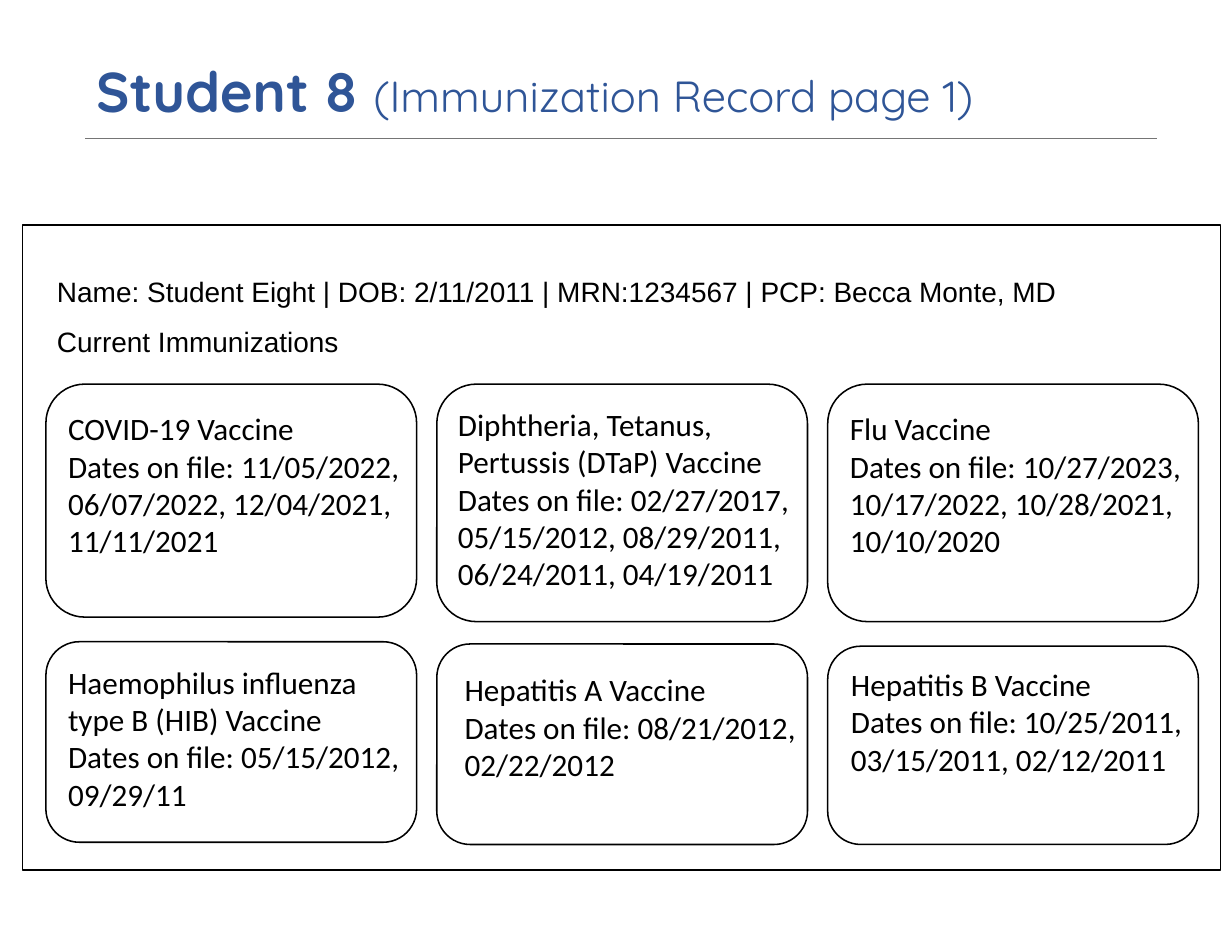
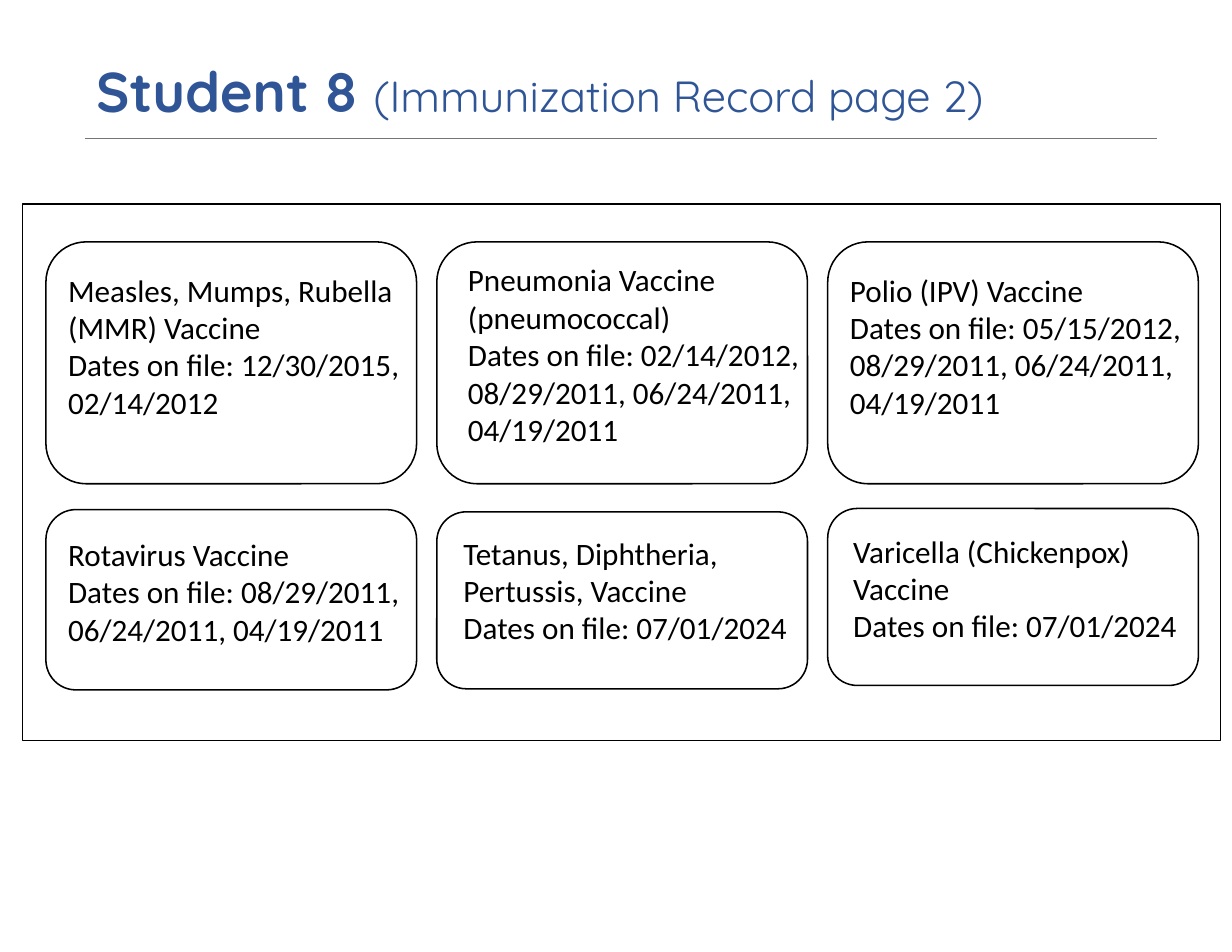
"""Build the two immunization record slides for Student 8."""
from dataclasses import dataclass

from lxml import etree
from pptx import Presentation
from pptx.dml.color import RGBColor
from pptx.enum.shapes import MSO_CONNECTOR, MSO_SHAPE
from pptx.enum.text import MSO_ANCHOR
from pptx.oxml.ns import qn
from pptx.util import Inches, Pt

RECTANGLE = MSO_SHAPE.RECTANGLE
ROUNDED = MSO_SHAPE.ROUNDED_RECTANGLE
STRAIGHT = MSO_CONNECTOR.STRAIGHT
TOP, MIDDLE = MSO_ANCHOR.TOP, MSO_ANCHOR.MIDDLE

COLORS = {"title": "2F5597", "rule": "757575", "ink": "000000"}
TITLE_FONT, INFO_FONT, CARD_FONT = "Quicksand", "Arial", "Calibri"
COLUMN_LEFT, COLUMN_STEP, COLUMNS = 0.41, 3.49, 3
CARD_WIDTH, CARD_TEXT_WIDTH = 3.31, 3.2


@dataclass
class Card:
    top: float
    height: float
    text_left: float
    text_top: float
    vaccine: str
    dates: str


class RecordDeck:
    def __init__(self):
        self.presentation = Presentation()
        self.presentation.slide_width = Inches(11)
        self.presentation.slide_height = Inches(8.5)
        self.slide = None

    def color(self, name):
        return RGBColor.from_string(COLORS[name])

    def style_run(self, run, font, size, color="ink", bold=False):
        run.font.name = font
        run.font.size = Pt(size)
        run.font.bold = bold
        run.font.color.rgb = self.color(color)

    def text_box(self, left, top, width, height, anchor=TOP):
        shape = self.slide.shapes.add_textbox(
            Inches(left), Inches(top), Inches(width), Inches(height))
        shape.text_frame.word_wrap = True
        shape.text_frame.vertical_anchor = anchor
        return shape.text_frame

    def text(self, left, top, width, height, content, font, size, spacing=1.0):
        text_frame = self.text_box(left, top, width, height)
        text_frame.text = content
        for paragraph in text_frame.paragraphs:
            paragraph.line_spacing = spacing
            for run in paragraph.runs:
                self.style_run(run, font, size)

    def outline(self, kind, left, top, width, height):
        shape = self.slide.shapes.add_shape(
            kind, Inches(left), Inches(top), Inches(width), Inches(height))
        shape.shadow.inherit = False
        shape.fill.background()
        shape.line.color.rgb = self.color("ink")
        shape.line.width = Pt(1)

    def rule(self, left, right, top):
        connector = self.slide.shapes.add_connector(
            STRAIGHT, Inches(left), Inches(top), Inches(right), Inches(top))
        connector.line.color.rgb = self.color("rule")
        connector.line.width = Pt(0.75)
        properties = connector.element.find(qn("p:spPr"))
        etree.SubElement(properties, qn("a:effectLst"))

    def title(self, subtitle):
        paragraph = self.text_box(0.76, 0.45, 9.49, 0.79, MIDDLE).paragraphs[0]
        paragraph.line_spacing = 0.9
        for content, size, bold in (("Student 8 ", 36, True), (subtitle, 28, False)):
            run = paragraph.add_run()
            run.text = content
            self.style_run(run, TITLE_FONT, size, "title", bold)

    def card(self, column, card):
        left = COLUMN_LEFT + column * COLUMN_STEP
        self.outline(ROUNDED, left, card.top, CARD_WIDTH, card.height)
        self.text(card.text_left, card.text_top, CARD_TEXT_WIDTH, 1.45,
                  f"{card.vaccine}\nDates on file: {card.dates}", CARD_FONT, 20)

    def record_page(self, number, frame_top, frame_height, cards):
        layout = self.presentation.slide_layouts[6]
        self.slide = self.presentation.slides.add_slide(layout)
        self.rule(0.76, 10.33, 1.24)
        self.title(f"(Immunization Record page {number})")
        self.outline(RECTANGLE, 0.2, frame_top, 10.7, frame_height)
        for index, card in enumerate(cards):
            self.card(index % COLUMNS, card)


FIRST_PAGE = [
    Card(3.43, 2.08, 0.51, 3.61, "COVID-19 Vaccine",
         "11/05/2022, 06/07/2022, 12/04/2021, 11/11/2021"),
    Card(3.43, 2.12, 3.99, 3.57, "Diphtheria, Tetanus, Pertussis (DTaP) Vaccine",
         "02/27/2017, 05/15/2012, 08/29/2011, 06/24/2011, 04/19/2011"),
    Card(3.43, 2.12, 7.49, 3.61, "Flu Vaccine",
         "10/27/2023, 10/17/2022, 10/28/2021,\n10/10/2020"),
    Card(5.73, 1.79, 0.51, 5.87, "Haemophilus influenza type B (HIB) Vaccine",
         "05/15/2012, 09/29/11"),
    Card(5.75, 1.79, 4.05, 5.94, "Hepatitis A Vaccine", "08/21/2012, 02/22/2012"),
    Card(5.77, 1.77, 7.5, 5.89, "Hepatitis B Vaccine",
         "10/25/2011, 03/15/2011, 02/12/2011"),
]
SECOND_PAGE = [
    Card(2.16, 2.16, 0.51, 2.37, "Measles, Mumps, Rubella (MMR) Vaccine",
         "12/30/2015, 02/14/2012"),
    Card(2.16, 2.16, 4.08, 2.28, "Pneumonia Vaccine (pneumococcal)",
         "02/14/2012, 08/29/2011, 06/24/2011, 04/19/2011"),
    Card(2.16, 2.16, 7.49, 2.37, "Polio (IPV) Vaccine",
         "05/15/2012, 08/29/2011, 06/24/2011, 04/19/2011"),
    Card(4.55, 1.61, 0.51, 4.73, "Rotavirus Vaccine",
         "08/29/2011, 06/24/2011, 04/19/2011"),
    Card(4.57, 1.58, 4.04, 4.72, "Tetanus, Diphtheria, Pertussis, Vaccine",
         "07/01/2024"),
    Card(4.54, 1.58, 7.52, 4.7, "Varicella (Chickenpox) Vaccine", "07/01/2024"),
]


def main():
    deck = RecordDeck()
    deck.record_page(1, 2.01, 5.76, FIRST_PAGE)
    deck.text(0.41, 2.25, 10.19, 1.31,
              "Name: Student Eight | DOB: 2/11/2011 | MRN:1234567 | "
              "PCP: Becca Monte, MD\nCurrent Immunizations", INFO_FONT, 18, 1.5)
    deck.record_page(2, 1.82, 4.79, SECOND_PAGE)
    deck.presentation.save("out.pptx")


if __name__ == "__main__":
    main()
